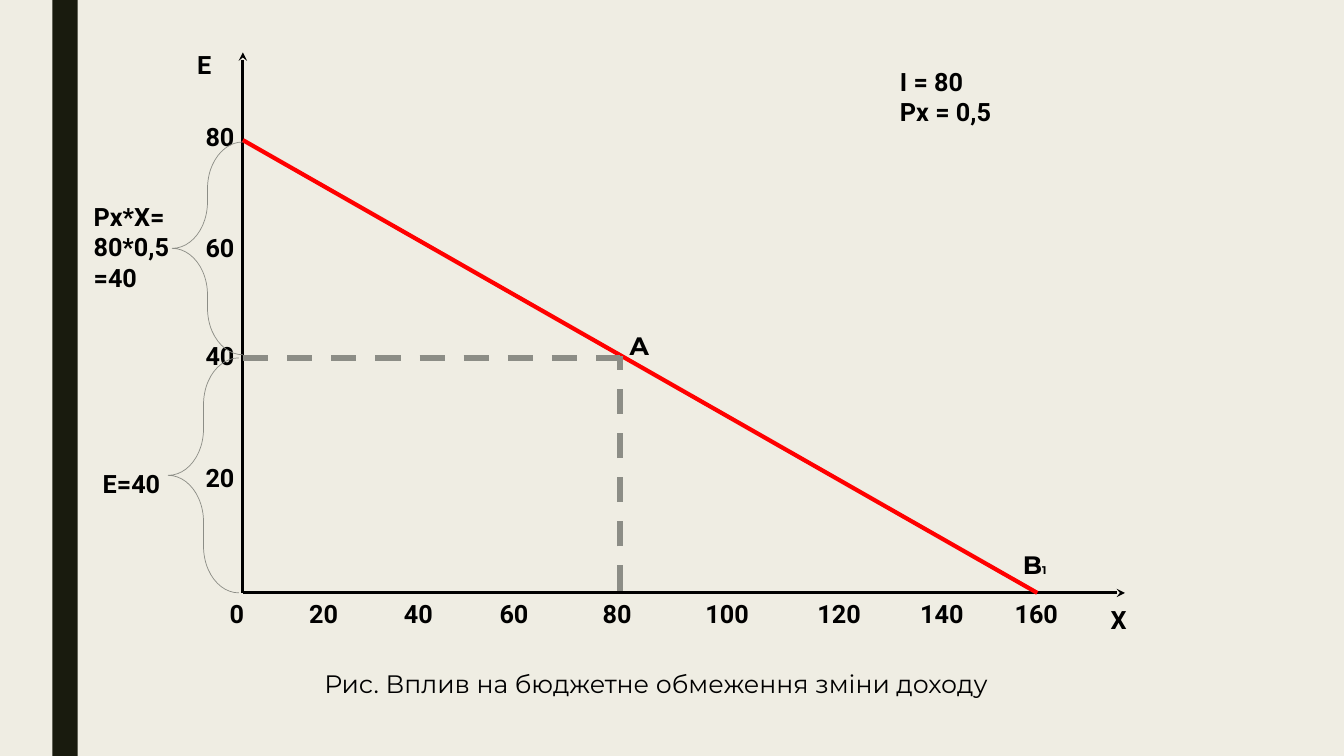
import pptx
import pptx.util
import pptx.dml.color
import pptx.enum.dml
import pptx.enum.shapes
import pptx.enum.text
import pptx.oxml.ns
from lxml import etree

Cm, Pt = pptx.util.Cm, pptx.util.Pt
RGBColor = pptx.dml.color.RGBColor
SHAPE = pptx.enum.shapes.MSO_SHAPE
DASH = pptx.enum.dml.MSO_LINE.DASH

PAPER = RGBColor(0xEF, 0xED, 0xE3)
BAR = RGBColor(0x19, 0x1B, 0x0E)
BLACK = RGBColor(0, 0, 0)
RED = RGBColor(0xFF, 0, 0)
GREY = RGBColor(0x8C, 0x8D, 0x86)

LABEL = {"name": "Roboto", "size": Pt(18), "bold": True}
POINT = {"name": "Montserrat", "size": Pt(18), "bold": True}
INDEX = {"name": "Montserrat", "size": Pt(8), "bold": True}
CAPTION = {"name": "Montserrat", "size": Pt(18), "bold": False}

# Chart geometry in cm
ORIGIN_X, ORIGIN_Y = 6.12, 14.94
A_X, A_Y = 15.62, 9.02
Y_LABEL_X = 4.93
Y_TICKS = {20: 11.53, 40: 8.46, 60: 5.72, 80: 2.92}
X_TICKS = {0: 5.54, 20: 7.54, 40: 9.93, 60: 12.34, 80: 14.94,
           100: 17.53, 120: 20.35, 140: 22.94, 160: 25.32}


def add_run(p, text, style):
    r = p.add_run()
    r.text = text
    for name, value in style.items():
        setattr(r.font, name, value)
    r.font.color.rgb = BLACK


def add_label(s, text, x, y, width=1.6, height=1.02, style=LABEL):
    tf = s.shapes.add_textbox(Cm(x), Cm(y), Cm(width), Cm(height)).text_frame
    tf.word_wrap = True
    for i, line in enumerate(text.split("\n")):
        p = tf.add_paragraph() if i else tf.paragraphs[0]
        add_run(p, line, style)
    return tf


def add_line(s, start, end, color, width, dash=None, arrow=False):
    ends = [Cm(v) for v in (*start, *end)]
    line = s.shapes.add_connector(
        pptx.enum.shapes.MSO_CONNECTOR.STRAIGHT, *ends)
    line.line.color.rgb = color
    line.line.width = Pt(width)
    if dash:
        line.line.dash_style = dash
    qn = pptx.oxml.ns.qn
    if arrow:
        ln = line.line._get_or_add_ln()
        etree.SubElement(ln, qn("a:tailEnd"), type="stealth")
    etree.SubElement(line._element.spPr, qn("a:effectLst"))


def add_shape(s, kind, x, y, width, height):
    sp = s.shapes.add_shape(kind, Cm(x), Cm(y), Cm(width), Cm(height))
    sp.shadow.inherit = False
    return sp


def add_bar(s):
    sp = add_shape(s, SHAPE.RECTANGLE, 1.32, 0, 0.64, 19.05)
    sp.fill.solid()
    sp.fill.fore_color.rgb = BAR
    sp.line.fill.background()


def add_brace(s, x, y, height):
    sp = add_shape(s, SHAPE.LEFT_BRACE, x, y, 1.78, height)
    sp.adjustments[0] = 0.66
    sp.fill.background()
    sp.line.color.rgb = GREY
    sp.line.width = Pt(0.5)


def set_caption(s, text):
    title = s.shapes.title
    title.left, title.top = Cm(7.34), Cm(16.71)
    title.width, title.height = Cm(18.39), Cm(1.8)
    tf = title.text_frame
    tf.word_wrap = True
    tf.auto_size = pptx.enum.text.MSO_AUTO_SIZE.NONE
    tf.vertical_anchor = pptx.enum.text.MSO_ANCHOR.TOP
    p = tf.paragraphs[0]
    p.alignment = pptx.enum.text.PP_ALIGN.CENTER
    add_run(p, text, CAPTION)


def main():
    prs = pptx.Presentation()
    prs.slide_width, prs.slide_height = Cm(33.87), Cm(19.05)
    s = prs.slides.add_slide(prs.slide_layouts[5])
    s.background.fill.solid()
    s.background.fill.fore_color.rgb = PAPER
    add_bar(s)

    # Axes
    origin = (ORIGIN_X, ORIGIN_Y)
    add_line(s, origin, (ORIGIN_X, 1.32), BLACK, 2, arrow=True)
    add_line(s, origin, (28.35, ORIGIN_Y), BLACK, 2, arrow=True)
    add_label(s, "E", 4.72, 1.12, 1)
    add_label(s, "X", 27.74, 15.11, 1)
    for value, y in Y_TICKS.items():
        add_label(s, str(value), Y_LABEL_X, y)
    for value, x in X_TICKS.items():
        add_label(s, str(value), x, ORIGIN_Y)

    # Budget line and its end point
    add_line(s, (ORIGIN_X, 3.53), (26.14, ORIGIN_Y), RED, 3)
    tf = add_label(s, "B", 25.53, 13.72, style=POINT)
    add_run(tf.paragraphs[0], "1", INDEX)

    # Caption and given values
    set_caption(s, "Рис. Вплив на бюджетне обмеження зміни доходу")
    add_label(s, "I = 80\nPx = 0,5", 22.43, 1.55, 4.88, 1.8)

    # Guides to point A
    add_line(s, (A_X, 14.88), (A_X, 8.97), GREY, 4.5, DASH.DASH)
    add_line(s, (ORIGIN_X, A_Y), (A_X, A_Y), GREY, 4.5, DASH.DASH)
    add_label(s, "A", A_X, 8.2, style=POINT)

    # Braces with the split of income
    add_brace(s, 4.24, A_Y, 5.92)
    add_label(s, "E=40", 2.34, 11.68, 2.31)
    add_brace(s, 4.34, 3.58, 5.36)
    add_label(s, "Px*X=80*0,5=40", 2.11, 4.95, 2.57, 2.57)

    prs.save("out.pptx")


if __name__ == "__main__":
    main()
